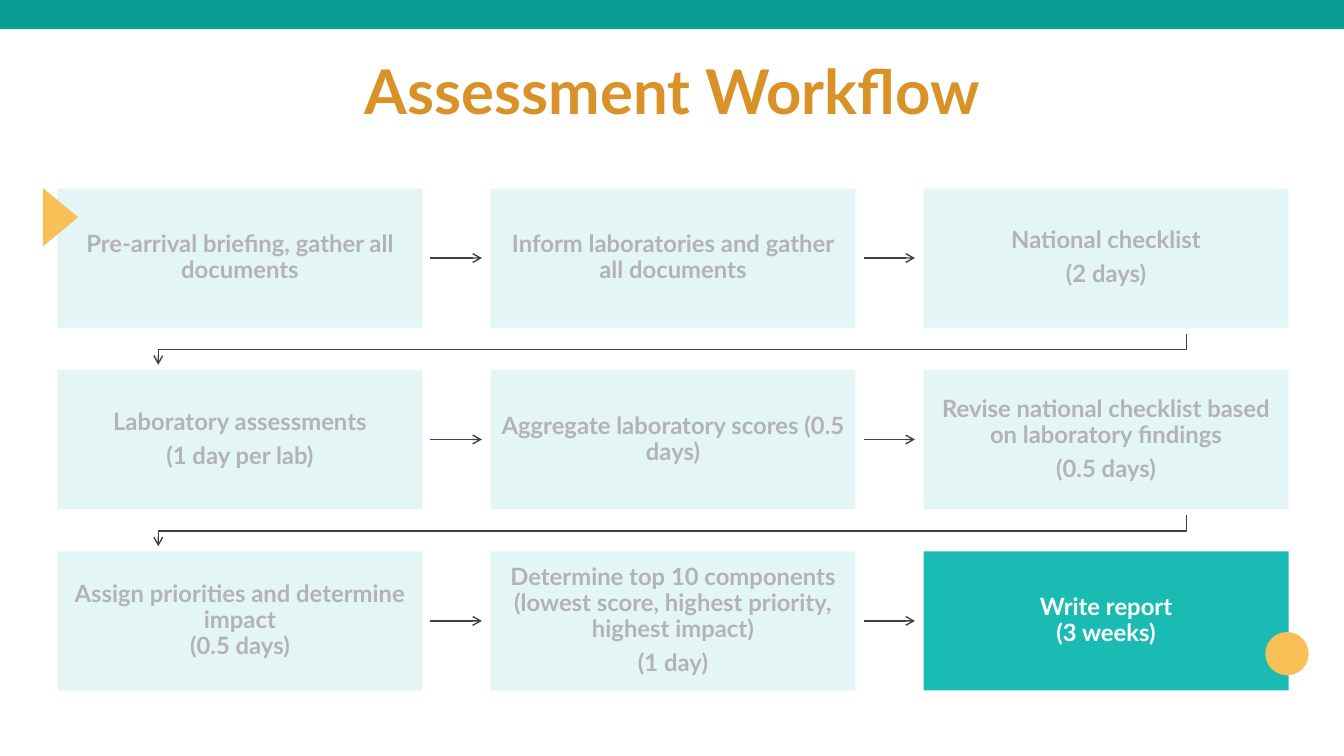
from lxml import etree
from pptx import Presentation
from pptx.dml.color import RGBColor
from pptx.enum.shapes import MSO_SHAPE as Preset
from pptx.enum.text import MSO_ANCHOR as Anchor, PP_ALIGN as Align
from pptx.oxml.ns import qn
from pptx.util import Inches, Pt

TITLE = "Assessment Workflow"
# Each step is a list of paragraphs; \v breaks a line inside one
STEPS = [
    [
        ["Pre-arrival briefing, gather all documents"],
        ["Inform laboratories and gather all documents"],
        ["National checklist", "(2 days)"],
    ],
    [
        ["Laboratory assessments", "(1 day per lab)"],
        ["Aggregate laboratory scores (0.5 days)"],
        ["Revise national checklist based on laboratory findings", "(0.5 days)"],
    ],
    [
        ["Assign priorities and determine impact\v(0.5 days)"],
        ["Determine top 10 components (lowest score, highest priority, highest impact)",
         "(1 day)"],
        ["Write report\v(3 weeks)"],
    ],
]
CURRENT = (2, 2)  # row and column of the highlighted step

COLORS = {
    "bar": "099E93", "title": "D99228", "step": "E4F5F5", "step_text": "B3B3B3",
    "current": "1ABBB3", "current_text": "FFFFFF", "arrow": "414141", "marker": "F8C056",
}
FONT = "Lato"

# Grid, in inches
LEFT, TOP = 0.57, 1.87
STEP_W, STEP_H = 3.62, 1.38
COL_PITCH, ROW_PITCH = (9.16 - LEFT) / 2, 1.8
ARROW_GAP, ARROW_LEN = 0.08, 0.51
RETURN_START_X, RETURN_END_X = 11.77, 1.57
RETURN_YS = (0.06, 0.22, 0.37)  # start, turn and end below a row


def color(name):
    return RGBColor.from_string(COLORS[name])


def add_preset(preset, x, y, w, h, fill):
    shape = slide.shapes.add_shape(preset, Inches(x), Inches(y), Inches(w), Inches(h))
    shape.shadow.inherit = False
    shape.fill.solid()
    shape.fill.fore_color.rgb = color(fill)
    shape.line.fill.background()
    return shape


def write(frame, paragraphs, size, text_color, inset, after):
    frame.word_wrap = True
    frame.vertical_anchor = Anchor.MIDDLE
    frame.margin_left = frame.margin_right = Inches(inset)
    frame.margin_top = frame.margin_bottom = Inches(inset)
    for i, text in enumerate(paragraphs):
        paragraph = frame.paragraphs[0] if i == 0 else frame.add_paragraph()
        paragraph.text = text
        paragraph.alignment = Align.CENTER
        paragraph.line_spacing = 0.9
        paragraph.space_after = Pt(after)
        font = paragraph.font
        font.name, font.size, font.bold = FONT, Pt(size), True
        font.color.rgb = color(text_color)


def style_arrow(arrow):
    arrow.line.color.rgb = color("arrow")
    arrow.line.width = Pt(1)
    etree.SubElement(arrow.line._get_or_add_ln(), qn("a:tailEnd"), type="arrow")


prs = Presentation()
prs.slide_width, prs.slide_height = Inches(13.33), Inches(7.5)
slide = prs.slides.add_slide(prs.slide_layouts[6])

# Top bar and title
add_preset(Preset.RECTANGLE, 0, 0, 13.33, 0.29, "bar")
title = slide.shapes.add_textbox(Inches(0.92), Inches(0.21), Inches(11.5), Inches(1.45))
write(title.text_frame, [TITLE], 44, "title", 0.05, 2)

for row, steps in enumerate(STEPS):
    y = TOP + row * ROW_PITCH
    for col, paragraphs in enumerate(steps):
        # Step box
        x = LEFT + col * COL_PITCH
        kind = "current" if (row, col) == CURRENT else "step"
        step = add_preset(Preset.RECTANGLE, x, y, STEP_W, STEP_H, kind)
        write(step.text_frame, paragraphs, 17, kind + "_text", 0.08, 6)

        # Arrow to the next step in the row
        if col < len(steps) - 1:
            start, middle = x + STEP_W + ARROW_GAP, y + STEP_H / 2
            arrow = slide.shapes.add_connector(
                1, Inches(start), Inches(middle), Inches(start + ARROW_LEN), Inches(middle))
            style_arrow(arrow)
            etree.SubElement(arrow._element.spPr, qn("a:effectLst"))

    # Return arrow to the next row
    if row < len(STEPS) - 1:
        start, turn, end = (Inches(y + STEP_H + dy) for dy in RETURN_YS)
        right, left = Inches(RETURN_START_X), Inches(RETURN_END_X)
        route = slide.shapes.build_freeform(right, start)
        route.add_line_segments([(right, turn), (left, turn), (left, end)], close=False)
        return_arrow = route.convert_to_shape()
        return_arrow.fill.background()
        style_arrow(return_arrow)
        return_arrow.shadow.inherit = False

# Start and finish markers
start_marker = add_preset(Preset.ISOSCELES_TRIANGLE, 0.31, 1.98, 0.58, 0.35, "marker")
start_marker.rotation = 90
add_preset(Preset.OVAL, 12.55, 6.27, 0.43, 0.43, "marker")

prs.save("out.pptx")
